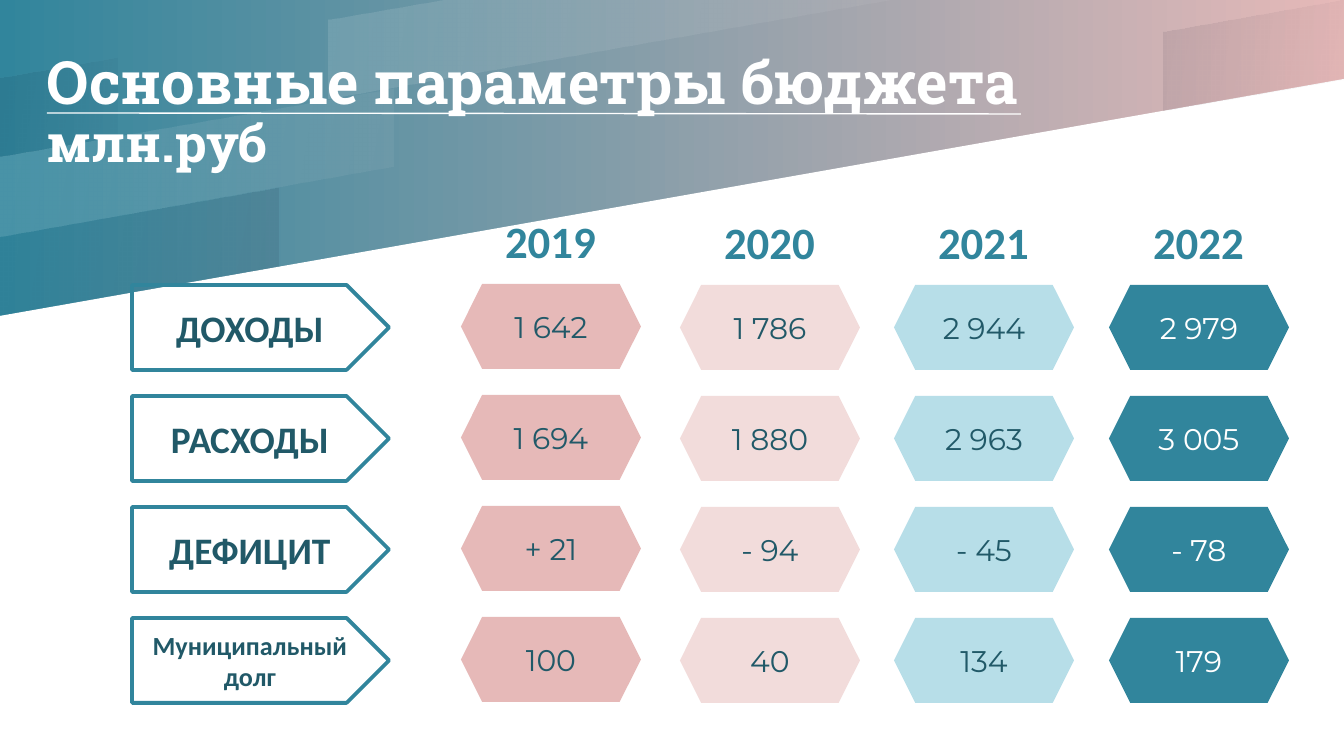
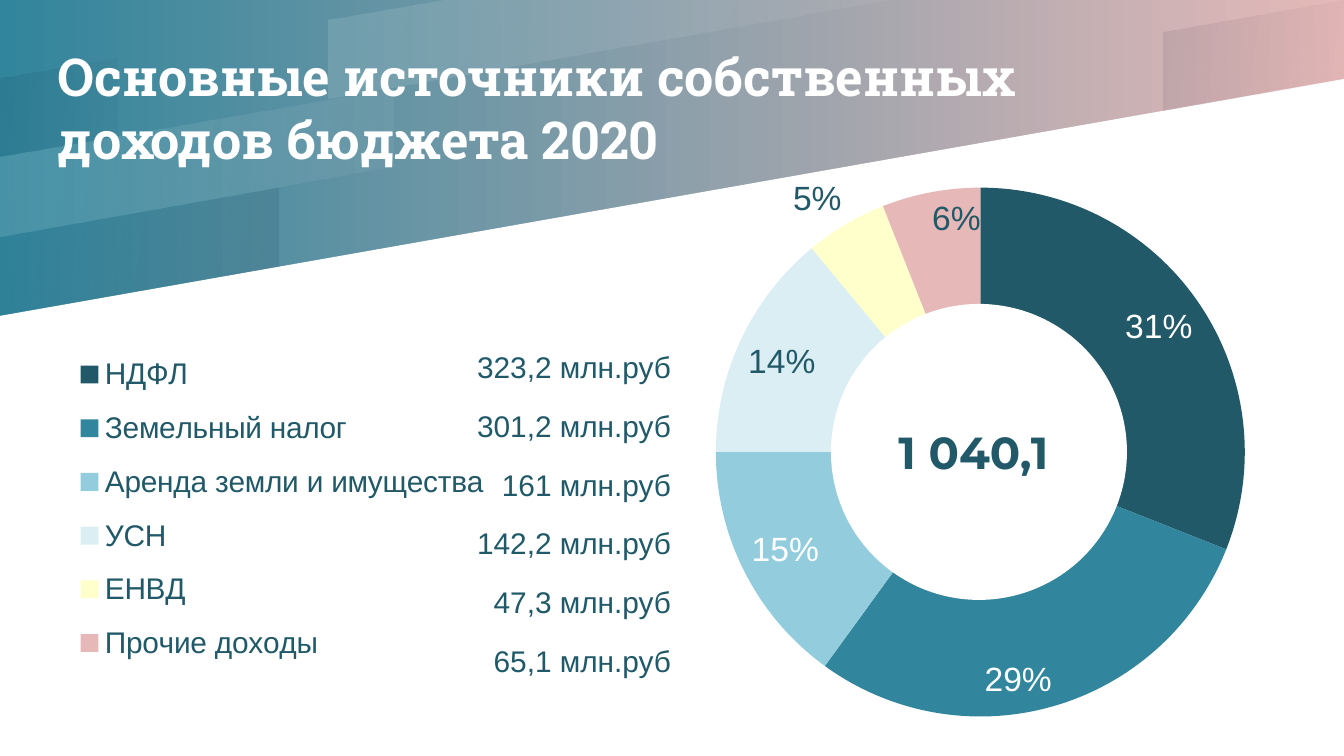
from lxml import etree
from pptx import Presentation
from pptx import util as u
from pptx.chart.data import CategoryChartData
from pptx.dml.color import RGBColor
from pptx.enum import chart as charts, shapes, text
from pptx.oxml import parse_xml
from pptx.oxml.ns import nsdecls, qn

EMU_PER_PX = 914400 / 134.4
COLORS = {
    "teal": "31859C", "deep": "215968", "sky": "93CDDD", "ice": "DBEEF4",
    "aqua": "B7DEE8", "rose": "E6B9B8", "blush": "F2DCDB", "cream": "FFFFCC",
    "white": "FFFFFF", "night": "00001A",
}

# Outline, colour, opacity in percent at both ends of the gradient
BANDS = [
    ([(0, 756), (1344, 756), (1344, 79), (0, 316)], "white", None),
    ([(446, 0), (328, 20), (328, 99), (894, 0)], "white", (12, 5)),
    ([(0, 78), (0, 157), (117, 137), (117, 58)], "night", (8, 2)),
    ([(0, 237), (0, 316), (278, 267), (278, 188)], "night", (2, 8)),
    ([(1344, 0), (1164, 32), (1164, 110), (1344, 79)], "night", (8, 2)),
    ([(0, 157), (0, 237), (394, 167), (394, 89)], "white", (12, 5)),
]

BUDGET_TITLE = [("Основные параметры бюджета ", 32), ("млн.руб", 28)]
BUDGET_ROWS = [("ДОХОДЫ", 20), ("РАСХОДЫ", 20), ("ДЕФИЦИТ", 20), ("Муниципальный долг", 14)]
# Year, left, vertical shift, fill, text colour, values
BUDGET_YEARS = [
    ("2019", 461, -1, "rose", "deep", ["1 642", "1 694", "+ 21", "100"]),
    ("2020", 680, 0, "blush", "deep", ["1 786", "1 880", "- 94", "40"]),
    ("2021", 894, 0, "aqua", "deep", ["2 944", "2 963", "- 45", "134"]),
    ("2022", 1109, 0, "teal", "white", ["2 979", "3 005", "- 78", "179"]),
]
ROW_TOP, ROW_PITCH, ROW_HEIGHT = 285, 111, 85

SOURCES_TITLE = [("Основные источники собственных ", 28), ("\v", 28), ("доходов бюджета 2020", 28)]
INSIDE = charts.XL_LABEL_POSITION.INSIDE_END
OUTSIDE = charts.XL_LABEL_POSITION.OUTSIDE_END
# Source, amount, percent, fill, label colour, label position
SOURCES = [
    ("НДФЛ", "323,2 млн.руб", 31, "deep", "white", INSIDE),
    ("Земельный налог", "301,2 млн.руб", 29, "teal", "white", INSIDE),
    ("Аренда земли и имущества", "161 млн.руб", 15, "sky", "white", INSIDE),
    ("УСН", "142,2 млн.руб", 14, "ice", "deep", INSIDE),
    ("ЕНВД", "47,3 млн.руб", 5, "cream", "deep", OUTSIDE),
    ("Прочие доходы", "65,1 млн.руб", 6, "rose", "deep", INSIDE),
]
SOURCES_TOTAL = "1 040,1"
CHART_BOX = (27, 134, 1292, 597)

TITLE_SHADOW = (
    f'<a:effectLst {nsdecls("a")}><a:outerShdw blurRad="38100" dist="38100" dir="2700000">'
    '<a:srgbClr val="000000"><a:alpha val="43000"/></a:srgbClr></a:outerShdw></a:effectLst>')


def px(*lengths):
    return [u.Emu(round(length * EMU_PER_PX)) for length in lengths]


def rgb(color):
    return RGBColor.from_string(COLORS[color])


def apply(target, formats):
    for name, value in formats.items():
        setattr(target, name, value)


def set_font(font, face, size, color, bold=False):
    apply(font, {"name": face, "size": u.Pt(size), "bold": bold})
    font.color.rgb = rgb(color)


def set_gradient(fill, colors, angle):
    fill.gradient()
    fill.gradient_angle = angle
    for stop, color, position in zip(fill.gradient_stops, colors, (0, 1)):
        stop.color.rgb = rgb(color)
        stop.position = position


def write(shape, content, *font, align=text.PP_ALIGN.CENTER):
    para = shape.text_frame.paragraphs[0]
    para.alignment = align
    span = para.add_run()
    span.text = content
    set_font(span.font, *font)


def add_text(page, box, content, *font):
    label = page.shapes.add_textbox(*px(*box))
    apply(label.text_frame, {"word_wrap": True, "auto_size": text.MSO_AUTO_SIZE.SHAPE_TO_FIT_TEXT})
    write(label, content, *font)


def add_preset(page, kind, box, fill=None, line=None):
    shape = page.shapes.add_shape(kind, *px(*box))
    shape.shadow.inherit = False
    shape.text_frame.vertical_anchor = text.MSO_ANCHOR.MIDDLE
    if fill:
        shape.fill.solid()
        shape.fill.fore_color.rgb = rgb(fill)
    else:
        shape.fill.background()
    if line:
        shape.line.color.rgb = rgb(line)
        shape.line.width = u.Pt(2)
    else:
        shape.line.fill.background()
    return shape


def dress_master(deck, page):
    """Give the master its gradient and bands; the bands are drawn on page, then moved."""
    master = deck.slide_master
    set_gradient(master.background.fill, ("teal", "rose"), 0)
    for index, (points, color, opacity) in enumerate(BANDS):
        builder = page.shapes.build_freeform(*points[0], scale=EMU_PER_PX)
        builder.add_line_segments(points[1:], close=True)
        band = builder.convert_to_shape()
        band.shadow.inherit = False
        band.line.fill.background()
        if opacity:
            set_gradient(band.fill, (color, color), 350)
            stops = band.element.spPr.iter(qn("a:srgbClr"))
            for stop, percent in zip(list(stops), opacity):
                etree.SubElement(stop, qn("a:alpha")).set("val", str(percent * 1000))
        else:
            band.fill.solid()
            band.fill.fore_color.rgb = rgb(color)
        master.shapes.element.insert(2 + index, band.element)


def set_title(page, box, spans, line_spacing=None):
    title = page.shapes.title
    apply(title, dict(zip(("left", "top", "width", "height"), px(*box))))
    apply(title.text_frame, {
        "margin_left": 0, "margin_top": 0, "margin_right": 0, "margin_bottom": 0,
        "word_wrap": True, "auto_size": text.MSO_AUTO_SIZE.NONE,
        "vertical_anchor": text.MSO_ANCHOR.MIDDLE})
    para = title.text_frame.paragraphs[0]
    apply(para, {"alignment": text.PP_ALIGN.LEFT, "line_spacing": line_spacing})
    for content, size in spans:
        if content == "\v":
            para.add_line_break()
            continue
        span = para.add_run()
        span.text = content
        set_font(span.font, "Roboto Slab", size, "white", True)
        fill = span.font._element.find(qn("a:solidFill"))
        fill.addnext(parse_xml(TITLE_SHADOW))


def build_budget(page):
    set_title(page, (47, 9, 1113, 208), BUDGET_TITLE, 0.9)
    rule = page.shapes.add_connector(shapes.MSO_CONNECTOR.STRAIGHT, *px(47, 113, 1021, 114))
    rule.line.color.rgb = rgb("white")
    rule.line.width = u.Pt(0.75)
    etree.SubElement(rule.element.spPr, qn("a:effectLst"))

    tops = [ROW_TOP + ROW_PITCH * row for row in range(len(BUDGET_ROWS))]
    for top, (name, size) in zip(tops, BUDGET_ROWS):
        arrow = add_preset(page, shapes.MSO_SHAPE.PENTAGON, (132, top, 257, ROW_HEIGHT), line="teal")
        write(arrow, name, "Calibri", size, "deep", True)
    for year, left, shift, fill, color, values in BUDGET_YEARS:
        add_text(page, (left + 25, 208 + shift, 129, 67), year, "Calibri", 24, "teal", True)
        for top, value in zip(tops, values):
            cell = add_preset(page, shapes.MSO_SHAPE.HEXAGON,
                              (left, top + shift, 180, ROW_HEIGHT), fill)
            write(cell, value, "Montserrat", 16, color)


def set_layout(parent, position, box, inner=False):
    """Fix a chart part at a box in page px, as shares of the chart's own box."""
    for old in parent.findall(qn("c:layout")):
        parent.remove(old)
    left, top, width, height = CHART_BOX
    shares = ((box[0] - left) / width, (box[1] - top) / height, box[2] / width, box[3] / height)
    target = '<c:layoutTarget val="inner"/>' if inner else ""
    modes = '<c:xMode val="edge"/><c:yMode val="edge"/>'
    sizes = "".join(f'<c:{tag} val="{share:.3f}"/>' for tag, share in zip("xywh", shares))
    parent.insert(position, parse_xml(
        f'<c:layout {nsdecls("c")}><c:manualLayout>{target}{modes}{sizes}'
        '</c:manualLayout></c:layout>'))


def add_sources_chart(page):
    data = CategoryChartData()
    data.categories = [source[0] for source in SOURCES]
    data.add_series("Series 1", [source[2] for source in SOURCES])
    chart = page.shapes.add_chart(charts.XL_CHART_TYPE.PIE, *px(*CHART_BOX), data).chart
    apply(chart, {"has_title": False, "has_legend": True})
    set_font(chart.font, "Arial", 18, "deep")
    legend = chart.legend
    apply(legend, {"position": charts.XL_LEGEND_POSITION.RIGHT, "include_in_layout": False})
    set_font(legend.font, "Arial", 16, "deep")
    set_layout(legend._element, 1, (72, 337, 420, 344))
    set_layout(chart.element.find(".//" + qn("c:plotArea")), 0, (705, 188, 550, 529), True)

    plot = chart.plots[0]
    apply(plot, {"vary_by_categories": True, "has_data_labels": True})
    apply(plot.data_labels, {"show_percentage": True, "show_value": False})
    for index, (_, _, _, fill, color, position) in enumerate(SOURCES):
        point = plot.series[0].points[index]
        point.format.fill.solid()
        point.format.fill.fore_color.rgb = rgb(fill)
        label = point.data_label
        set_font(label.font, "Arial", 18, color)
        label.position = position
        for tag, shown in (("c:showVal", "0"), ("c:showPercent", "1")):
            for flag in plot.series[0]._element.iter(qn(tag)):
                flag.set("val", shown)


def add_amounts(page):
    box = page.shapes.add_textbox(*px(470, 349, 201, 322))
    frame = box.text_frame
    apply(frame, {"word_wrap": True, "margin_left": 0, "margin_right": 0,
                  "margin_top": 0, "margin_bottom": 0})
    for index, source in enumerate(SOURCES):
        para = frame.add_paragraph() if index else frame.paragraphs[0]
        apply(para, {"alignment": text.PP_ALIGN.RIGHT, "space_after": u.Pt(12.25)})
        span = para.add_run()
        span.text = source[1]
        set_font(span.font, "Arial", 16, "deep")


def build_sources(page):
    set_title(page, (58, 19, 1218, 177), SOURCES_TITLE)
    add_sources_chart(page)
    add_amounts(page)
    add_preset(page, shapes.MSO_SHAPE.OVAL, (831, 304, 296, 296), "white")
    add_text(page, (852, 418, 243, 67), SOURCES_TOTAL, "Montserrat", 24, "deep", True)


def main():
    deck = Presentation()
    deck.slide_width, deck.slide_height = px(1344, 756)
    title_only = deck.slide_layouts[5]
    budget, sources = (deck.slides.add_slide(title_only) for _ in range(2))
    dress_master(deck, budget)
    build_budget(budget)
    build_sources(sources)
    deck.save("out.pptx")


if __name__ == "__main__":
    main()
